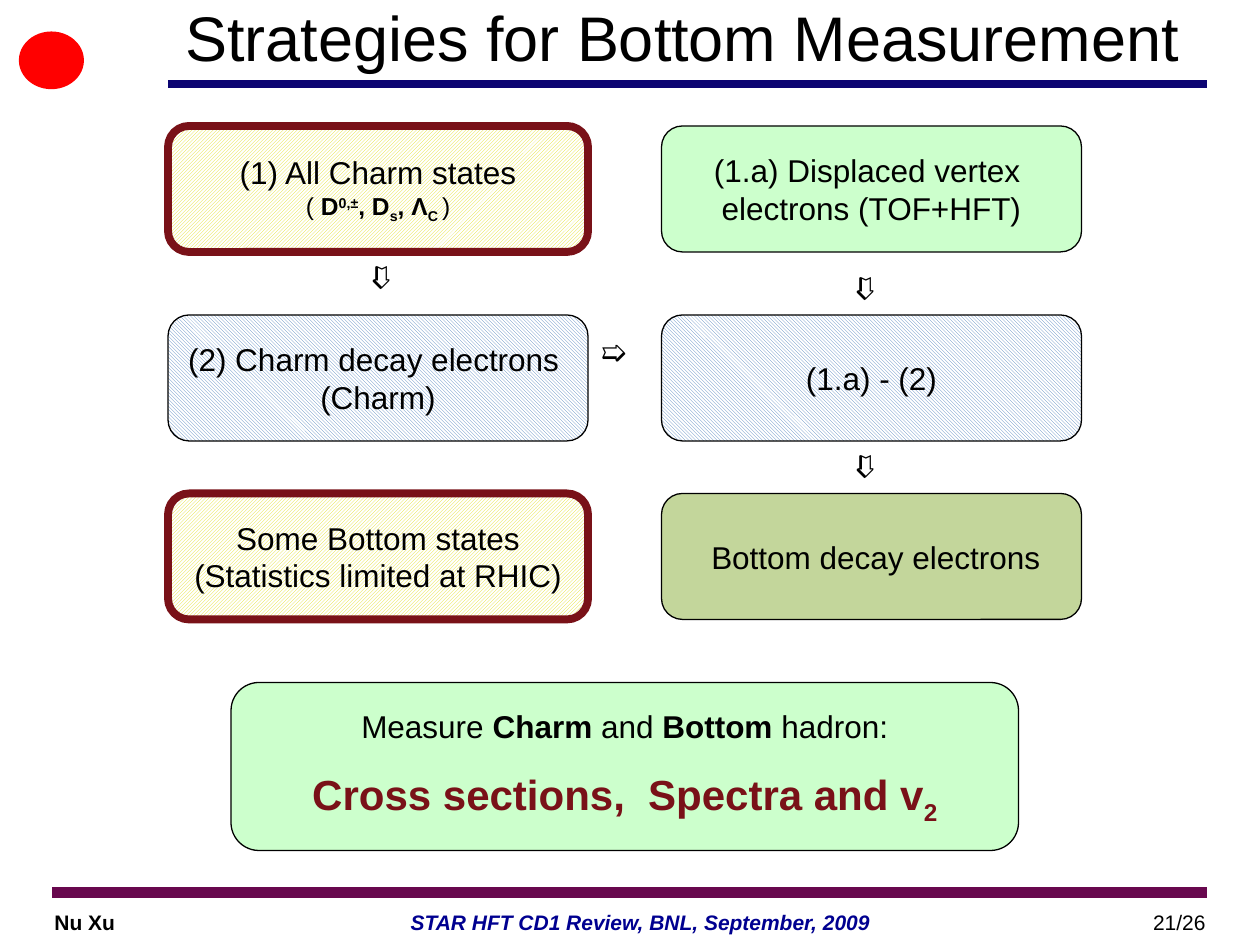
from lxml.etree import SubElement
from pptx import Presentation
from pptx.dml.color import RGBColor
from pptx.enum.dml import MSO_PATTERN
from pptx.enum.shapes import MSO_CONNECTOR, MSO_SHAPE
from pptx.enum.text import MSO_ANCHOR, PP_ALIGN
from pptx.oxml.ns import qn
from pptx.util import Pt

PIXEL = 7620
BLACK = "000000"
NAVY = "0C0572"
MAROON = "791118"
MINT = "CCFFCC"
OLIVE = "C3D69B"
YELLOW_HATCH = (MSO_PATTERN.LIGHT_UPWARD_DIAGONAL, "E3DF1C")
BLUE_HATCH = (MSO_PATTERN.LIGHT_DOWNWARD_DIAGONAL, "4F81BD")
CARD_WIDTH, CARD_HEIGHT = 400, 120


def px(*lengths):
    return [length * PIXEL for length in lengths]


def color(hex_string):
    return RGBColor.from_string(hex_string)


def format_run(run, size=18, hex_color=BLACK, bold=False, italic=False, baseline=0):
    font = run.font
    font.name = "Arial"
    font.size = Pt(size)
    font.bold = bold
    font.italic = italic
    font.color.rgb = color(hex_color)
    if baseline:
        run._r.get_or_add_rPr().set("baseline", str(baseline * 1000))


def write_text(shape, paragraphs, align=PP_ALIGN.CENTER, anchor=MSO_ANCHOR.MIDDLE, wrap=False):
    text_frame = shape.text_frame
    text_frame.word_wrap = wrap
    text_frame.vertical_anchor = anchor
    for index, pieces in enumerate(paragraphs):
        paragraph = text_frame.add_paragraph() if index else text_frame.paragraphs[0]
        paragraph.alignment = align
        for text, style in pieces:
            run = paragraph.add_run()
            run.text = text
            format_run(run, **style)


def add_label(slide, box, text, align=PP_ALIGN.LEFT, anchor=MSO_ANCHOR.TOP, wrap=True, **style):
    label = slide.shapes.add_textbox(*px(*box))
    write_text(label, [[(text, style)]], align, anchor, wrap)
    return label


def add_rule(slide, left, right, top, hex_color, weight):
    rule = slide.shapes.add_connector(MSO_CONNECTOR.STRAIGHT, *px(left, top, right, top))
    rule.line.color.rgb = color(hex_color)
    rule.line.width = Pt(weight)
    SubElement(rule._element.spPr, qn("a:effectLst"))


def add_card(slide, box, fill, paragraphs, outline=BLACK, weight=0.75):
    card = slide.shapes.add_shape(MSO_SHAPE.ROUNDED_RECTANGLE, *px(*box))
    card.shadow.inherit = False
    if isinstance(fill, tuple):
        pattern, foreground = fill
        card.fill.patterned()
        card.fill.pattern = pattern
        card.fill.fore_color.rgb = color(foreground)
        card.fill.back_color.rgb = color("FFFFFF")
    else:
        card.fill.solid()
        card.fill.fore_color.rgb = color(fill)
    card.line.color.rgb = color(outline)
    card.line.width = Pt(weight)
    write_text(card, paragraphs)
    return card


def add_header(slide, left, top, width, height):
    emblem = slide.shapes.add_shape(MSO_SHAPE.OVAL, *px(left + 18, top + 30, 62, 55))
    emblem.shadow.inherit = False
    emblem.fill.solid()
    emblem.fill.fore_color.rgb = color("FF0000")
    emblem.line.fill.background()
    add_rule(slide, left + 160, left + width - 50, top + height, NAVY, 4.5)
    add_label(slide, (left + 140, top, 1020, 70), "Strategies for Bottom Measurement",
              PP_ALIGN.CENTER, MSO_ANCHOR.MIDDLE, size=36)


def add_strategy_grid(slide, left, top):
    small = {"size": 14}
    strong = {"size": 14, "bold": True}
    superscript = {**strong, "baseline": 30}
    subscript = {**strong, "baseline": -25}
    charm_states = [
        [("(1) All Charm states", {})],
        [("( ", small), ("D", strong), ("0,±", superscript), (", D", strong), ("s", subscript),
         (", Λ", strong), ("C ", subscript), (")", small)],
    ]
    framed = {"outline": MAROON, "weight": 4.5}
    columns = (left, left + 470)
    rows = (top, top + 180, top + 350)
    cards = [
        (0, 0, YELLOW_HATCH, charm_states, framed),
        (1, 0, MINT, [[("(1.a) Displaced vertex ", {})], [("electrons (TOF+HFT)", {})]], {}),
        (0, 1, BLUE_HATCH, [[("(2) Charm decay electrons ", {})], [("(Charm)", {})]], {}),
        (1, 1, BLUE_HATCH, [[("(1.a) - (2)", {})]], {}),
        (0, 2, YELLOW_HATCH,
         [[("Some Bottom states", {})], [("(Statistics limited at RHIC)", {})]], framed),
        (1, 2, OLIVE, [[(" Bottom decay electrons", {})]], {}),
    ]
    for column, row, fill, paragraphs, border in cards:
        box = (columns[column], rows[row], CARD_WIDTH, CARD_HEIGHT)
        add_card(slide, box, fill, paragraphs, **border)

    arrows = [(400, 190, 0), (170, 120, 90), (631, 130, 90), (631, 300, 90)]
    for across, down, rotation in arrows:
        arrow = add_label(slide, (left + across, top + down, 59, 60), "➯", wrap=False)
        arrow.rotation = rotation


def add_conclusion(slide, *box):
    bold = {"bold": True}
    headline = {"size": 24, "hex_color": MAROON, "bold": True}
    card = add_card(slide, box, MINT, [
        [("Measure ", {}), ("Charm", bold), (" and ", {}), ("Bottom", bold), (" hadron:", {})],
        [("Cross sections,  Spectra and v", headline), ("2", {**headline, "baseline": -25})],
    ])
    card.text_frame.paragraphs[1].space_before = Pt(14)


def add_footer(slide, left, top, width):
    add_rule(slide, left + 50, left + width - 50, top, "68084E", 6)
    text_top = top + 10
    add_label(slide, (left + 40, text_top, 90, 30), "Nu Xu", size=12, bold=True)
    add_label(slide, (left + 130, text_top, 960, 36), "STAR HFT CD1 Review, BNL, September, 2009",
              PP_ALIGN.CENTER, size=12, hex_color="000090", bold=True, italic=True)
    add_label(slide, (left + 910, text_top, 250, 30), "21/26", PP_ALIGN.RIGHT, size=12)


def main():
    presentation = Presentation()
    presentation.slide_width, presentation.slide_height = px(1200, 900)
    slide = presentation.slides.add_slide(presentation.slide_layouts[6])
    add_header(slide, 0, 0, 1200, 80)
    add_strategy_grid(slide, 160, 120)
    add_conclusion(slide, 220, 650, 750, 160)
    add_footer(slide, 0, 850, 1200)
    presentation.save("out.pptx")


if __name__ == "__main__":
    main()
